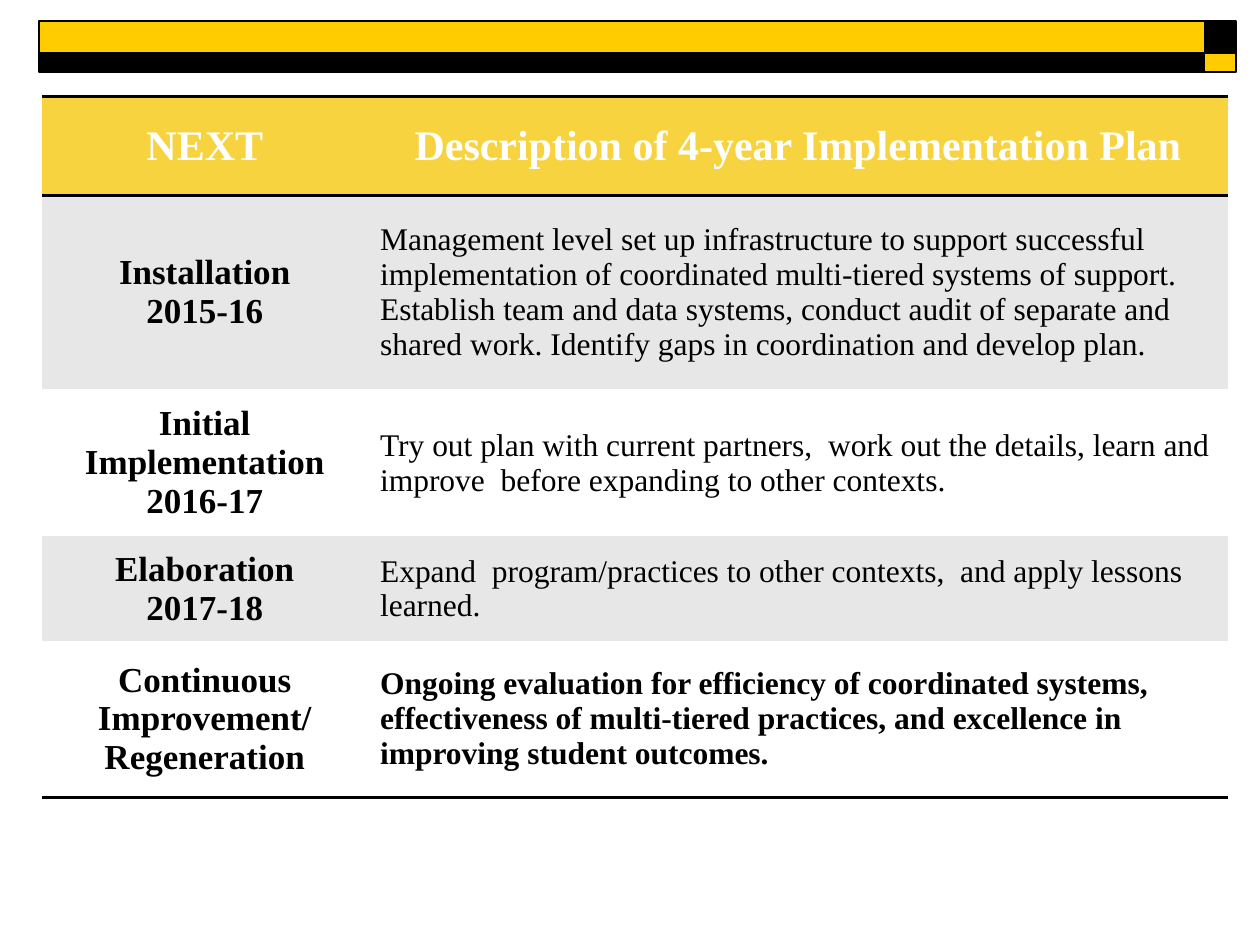
from dataclasses import dataclass

from lxml import etree
from pptx import Presentation
from pptx.dml.color import RGBColor
from pptx.enum.shapes import MSO_SHAPE
from pptx.enum.text import MSO_ANCHOR, PP_ALIGN
from pptx.oxml.ns import qn
from pptx.util import Pt

RECTANGLE = MSO_SHAPE.RECTANGLE
MIDDLE = MSO_ANCHOR.MIDDLE
CENTER, LEFT = PP_ALIGN.CENTER, PP_ALIGN.LEFT
NO_GRID_STYLE = "{2D5ABB26-0587-4C30-8999-92F81FD0307C}"


@dataclass(frozen=True)
class Theme:
    font: str = "Times New Roman"
    black: str = "000000"
    white: str = "FFFFFF"
    gold: str = "FFCC00"
    header: str = "F7D43F"
    band: str = "E7E7E7"
    header_size: float = 24
    stage_size: float = 20
    description_size: float = 18
    rule: float = 2


@dataclass(frozen=True)
class Bar:
    left: float
    top: float
    width: float
    height: float
    color: str


@dataclass(frozen=True)
class Stage:
    lines: tuple[str, ...]
    description: str
    height: float
    bold: bool = False


@dataclass(frozen=True)
class TextStyle:
    size: float
    color: str
    bold: bool
    align: int


THEME = Theme()

# Banner: a wide column and a narrow one, with colours swapped
WIDE, NARROW, UPPER, LOWER = 666, 18, 18, 10.8
BANNER_LEFT, BANNER_TOP = 22.3, 12.2
BARS = [
    Bar(BANNER_LEFT + WIDE, BANNER_TOP, NARROW, UPPER, THEME.black),
    Bar(BANNER_LEFT, BANNER_TOP, WIDE, UPPER, THEME.gold),
    Bar(BANNER_LEFT, BANNER_TOP + UPPER, WIDE, LOWER, THEME.black),
    Bar(BANNER_LEFT + WIDE, BANNER_TOP + UPPER, NARROW, LOWER, THEME.gold),
]

# Plan content
TABLE_LEFT, TABLE_TOP = 24, 55.4
COLUMN_WIDTHS = (186, 492)
HEADER_HEIGHT = 56.2
HEADINGS = ("NEXT", "Description of 4-year Implementation Plan")
STAGES = [
    Stage(("Installation", "2015-16"),
          "Management level set up infrastructure to support successful "
          "implementation of coordinated multi-tiered systems of support.  "
          "Establish team and data systems, conduct audit of separate and "
          "shared work. Identify gaps in coordination and develop plan.", 111),
    Stage(("Initial Implementation", "2016-17"),
          "Try out plan with current partners,  work out the details, learn "
          "and improve  before expanding to other contexts.", 84),
    Stage(("Elaboration", "2017-18"),
          "Expand  program/practices to other contexts,  and apply lessons "
          "learned.", 59.8),
    Stage(("Continuous Improvement/ Regeneration",),
          "Ongoing evaluation for efficiency of coordinated systems, "
          "effectiveness of multi-tiered practices, and excellence in "
          "improving student outcomes.", 89.2, bold=True),
]


def draw_bar(slide, bar: Bar) -> None:
    shape = slide.shapes.add_shape(
        RECTANGLE, Pt(bar.left), Pt(bar.top), Pt(bar.width), Pt(bar.height))
    shape.shadow.inherit = False
    shape.fill.solid()
    shape.fill.fore_color.rgb = RGBColor.from_string(bar.color)
    shape.line.color.rgb = RGBColor.from_string(THEME.black)
    shape.line.width = Pt(1)


def add_rules(cell, edges: tuple[str, ...]) -> None:
    """Black rules on the given edges, placed ahead of the cell's fill."""
    properties = cell._tc.get_or_add_tcPr()
    for position, edge in enumerate(edges):
        rule = etree.Element(qn(f"a:{edge}"), w=str(Pt(THEME.rule)))
        fill = etree.SubElement(rule, qn("a:solidFill"))
        etree.SubElement(fill, qn("a:srgbClr"), val=THEME.black)
        properties.insert(position, rule)


def fill_cell(cell, lines: tuple[str, ...], style: TextStyle, fill: str,
              edges: tuple[str, ...] = ()) -> None:
    cell.fill.solid()
    cell.fill.fore_color.rgb = RGBColor.from_string(fill)
    cell.vertical_anchor = MIDDLE
    frame = cell.text_frame
    for index, line in enumerate(lines):
        paragraph = frame.add_paragraph() if index else frame.paragraphs[0]
        paragraph.alignment = style.align
        run = paragraph.add_run()
        run.text = line
        run.font.name = THEME.font
        run.font.size = Pt(style.size)
        run.font.bold = style.bold
        run.font.color.rgb = RGBColor.from_string(style.color)
    add_rules(cell, edges)


def draw_plan(slide) -> None:
    heights = [HEADER_HEIGHT] + [stage.height for stage in STAGES]
    plan = slide.shapes.add_table(
        len(heights), len(COLUMN_WIDTHS), Pt(TABLE_LEFT), Pt(TABLE_TOP),
        Pt(sum(COLUMN_WIDTHS)), Pt(sum(heights))).table
    plan.horz_banding = False
    plan._tbl.tblPr.find(qn("a:tableStyleId")).text = NO_GRID_STYLE
    for column, width in zip(plan.columns, COLUMN_WIDTHS):
        column.width = Pt(width)
    for row, height in zip(plan.rows, heights):
        row.height = Pt(height)

    # Heading row
    heading_style = TextStyle(THEME.header_size, THEME.white, True, CENTER)
    for column, heading in enumerate(HEADINGS):
        fill_cell(plan.cell(0, column), (heading,), heading_style,
                  THEME.header, ("lnT", "lnB"))

    # Stage rows, shaded in turn
    stage_style = TextStyle(THEME.stage_size, THEME.black, True, CENTER)
    for row, stage in enumerate(STAGES, start=1):
        fill = THEME.band if row % 2 else THEME.white
        edges = ("lnB",) if row == len(STAGES) else ()
        description_style = TextStyle(
            THEME.description_size, THEME.black, stage.bold, LEFT)
        fill_cell(plan.cell(row, 0), stage.lines, stage_style, fill, edges)
        fill_cell(plan.cell(row, 1), (stage.description,), description_style,
                  fill, edges)


def main() -> None:
    deck = Presentation()
    deck.slide_width, deck.slide_height = Pt(720), Pt(540)
    slide = deck.slides.add_slide(deck.slide_layouts[6])
    for bar in BARS:
        draw_bar(slide, bar)
    draw_plan(slide)
    deck.save("out.pptx")


if __name__ == "__main__":
    main()
